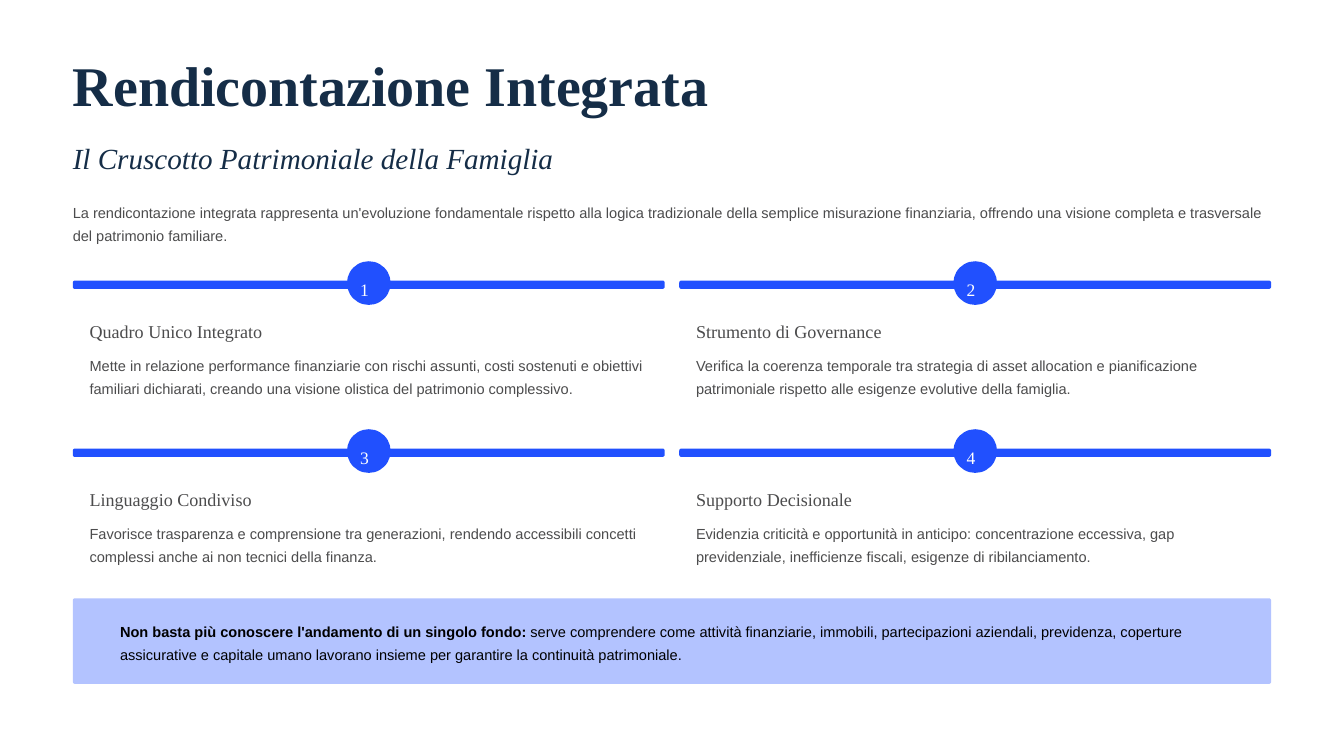
from pptx import Presentation
from pptx.dml.color import RGBColor
from pptx.enum.shapes import MSO_SHAPE
from pptx.enum.text import MSO_ANCHOR, PP_ALIGN
from pptx.util import Pt

COLORS = {
    "white": "FFFFFF",
    "navy": "152D47",
    "gray": "4C4C4D",
    "blue": "2150FE",
    "pale_blue": "B3C3FF",
    "black": "000000",
}
SERIF, SANS = "Times New Roman", "Arial"

LEFT, CONTENT_WIDTH = 62.4, 1027.2
CARD_TOP, CARD_WIDTH, CARD_HEIGHT = 242.64, 507.4, 112.32
COLUMN_STEP, ROW_STEP = 519.8, 144
BADGE_SIZE = 37.44

CARDS = [
    ("Quadro Unico Integrato",
     "Mette in relazione performance finanziarie con rischi assunti, costi sostenuti e obiettivi "
     "familiari dichiarati, creando una visione olistica del patrimonio complessivo."),
    ("Strumento di Governance",
     "Verifica la coerenza temporale tra strategia di asset allocation e pianificazione "
     "patrimoniale rispetto alle esigenze evolutive della famiglia."),
    ("Linguaggio Condiviso",
     "Favorisce trasparenza e comprensione tra generazioni, rendendo accessibili concetti "
     "complessi anche ai non tecnici della finanza."),
    ("Supporto Decisionale",
     "Evidenzia criticità e opportunità in anticipo: concentrazione eccessiva, gap "
     "previdenziale, inefficienze fiscali, esigenze di ribilanciamento."),
]


def color(name):
    return RGBColor.from_string(COLORS[name])


class SlideBuilder:
    """Draws styled elements on one slide; all lengths are in points."""

    def __init__(self, slide):
        self.slide = slide
        background = slide.background.fill
        background.solid()
        background.fore_color.rgb = color("white")

    def block(self, left, top, width, height, fill, corner=None, kind=MSO_SHAPE.ROUNDED_RECTANGLE):
        shape = self.slide.shapes.add_shape(kind, Pt(left), Pt(top), Pt(width), Pt(height))
        if corner is not None:
            shape.adjustments[0] = corner
        shape.shadow.inherit = False
        shape.fill.solid()
        shape.fill.fore_color.rgb = color(fill)
        shape.line.fill.background()

    def text(self, left, top, width, height, runs, size, font, ink, spacing, wrap=False, italic=False):
        """Adds one paragraph; runs is a list of (text, bold) pairs."""
        box = self.slide.shapes.add_textbox(Pt(left), Pt(top), Pt(width), Pt(height))
        frame = box.text_frame
        frame.margin_left = frame.margin_top = frame.margin_right = frame.margin_bottom = 0
        frame.word_wrap = wrap
        frame.vertical_anchor = MSO_ANCHOR.TOP
        paragraph = frame.paragraphs[0]
        paragraph.alignment = PP_ALIGN.LEFT
        paragraph.line_spacing = Pt(spacing)
        for content, bold in runs:
            run = paragraph.add_run()
            run.text = content
            run.font.name = font
            run.font.size = Pt(size)
            run.font.bold = bold
            run.font.italic = italic
            run.font.color.rgb = color(ink)

    def body(self, left, top, width, runs, ink="gray"):
        self.text(left, top, width, 40.32, runs, 12.5, SANS, ink, 20, wrap=True)

    def card(self, left, top, number, heading, description):
        self.block(left, top, CARD_WIDTH, CARD_HEIGHT, "white", 0.077)
        self.block(left, top - 2.16, CARD_WIDTH, 7.2, "blue", 0.26)
        badge_left = left + (CARD_WIDTH - BADGE_SIZE) / 2
        self.block(badge_left, top - BADGE_SIZE / 2, BADGE_SIZE, BADGE_SIZE, "blue", kind=MSO_SHAPE.OVAL)
        self.text(badge_left + 11.3, top - 9.36, 15.12, 18.72, [(str(number), False)],
                  15, SERIF, "white", 24)
        self.text(left + 14.4, top + 30.96, 165, 19.44, [(heading, False)],
                  15.5, SERIF, "gray", 19.5)
        self.body(left + 14.4, top + 58.32, CARD_WIDTH - 28.8, [(description, False)])


def main():
    presentation = Presentation()
    presentation.slide_width, presentation.slide_height = Pt(1152), Pt(648)
    builder = SlideBuilder(presentation.slides.add_slide(presentation.slide_layouts[6]))

    builder.text(LEFT, 61.92, 600, 38.88, [("Rendicontazione Integrata", True)],
                 48, SERIF, "navy", 39)
    builder.text(LEFT, 119.52, 440, 30.96, [("Il Cruscotto Patrimoniale della Famiglia", False)],
                 25, SERIF, "navy", 31, italic=True)
    builder.body(LEFT, 169.92, CONTENT_WIDTH, [(
        "La rendicontazione integrata rappresenta un'evoluzione fondamentale rispetto alla logica "
        "tradizionale della semplice misurazione finanziaria, offrendo una visione completa e "
        "trasversale del patrimonio familiare.", False)])

    for index, (heading, description) in enumerate(CARDS):
        row, column = divmod(index, 2)
        builder.card(LEFT + column * COLUMN_STEP, CARD_TOP + row * ROW_STEP,
                     index + 1, heading, description)

    builder.block(LEFT, 512.8, CONTENT_WIDTH, 73.44, "pale_blue", 0.026)
    builder.body(102.96, 528.8, 974.16, [
        ("Non basta più conoscere l'andamento di un singolo fondo:", True),
        (" serve comprendere come attività finanziarie, immobili, partecipazioni aziendali, "
         "previdenza, coperture assicurative e capitale umano lavorano insieme per garantire "
         "la continuità patrimoniale.", False),
    ], "black")

    presentation.save("out.pptx")


if __name__ == "__main__":
    main()
